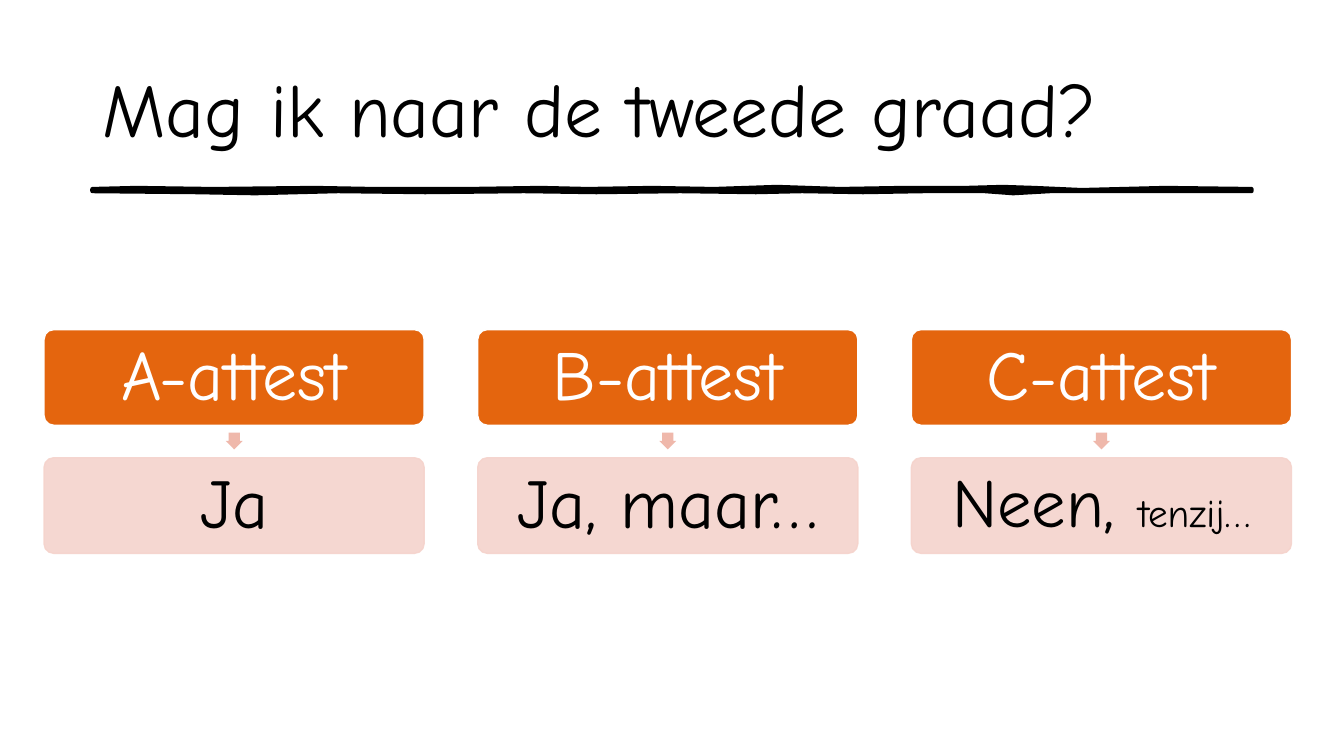
from dataclasses import dataclass

from lxml.etree import SubElement
from pptx import Presentation
from pptx.dml.color import RGBColor
from pptx.enum.shapes import MSO_SHAPE
from pptx.enum.text import MSO_ANCHOR, MSO_AUTO_SIZE, PP_ALIGN
from pptx.oxml.ns import qn
from pptx.shapes.autoshape import Shape
from pptx.slide import Slide
from pptx.text.text import TextFrame, _Paragraph
from pptx.util import Emu, Pt

PX = 9525
FONT = "Comic Neue"
BLACK = RGBColor(0x00, 0x00, 0x00)
WHITE = RGBColor(0xFF, 0xFF, 0xFF)
ORANGE = RGBColor(0xE4, 0x65, 0x0E)
PINK = RGBColor(0xF5, 0xD3, 0xCC)
ROSE = RGBColor(0xEF, 0xB8, 0xAB)

CARD_LEFT, CARD_STEP = 42, 413
CARD_WIDTH, CARD_HEIGHT = 362, 91
ATTEST_TOP, ARROW_TOP, ANSWER_TOP = 314, 412, 436
ARROW_SIZE = 16
CARD_INSET = 10

UNDERLINE_UPPER = [
    (88, 180), (130, 179), (203, 180), (300, 179), (356, 180), (446, 180),
    (515, 179), (560, 180), (621, 179), (680, 180), (740, 178), (800, 180),
    (860, 179), (920, 179), (955, 178), (985, 179), (1030, 181), (1110, 179),
    (1192, 180),
]
UNDERLINE_LOWER = [
    (1192, 182), (1145, 182), (1060, 182), (1000, 182), (965, 184), (938, 182),
    (880, 182), (822, 183), (764, 182), (720, 183), (648, 182), (568, 183),
    (499, 182), (405, 183), (322, 182), (243, 184), (187, 183), (88, 182),
]


@dataclass(frozen=True)
class Words:
    text: str
    size: int


@dataclass(frozen=True)
class Outcome:
    attest: Words
    answer: tuple[Words, ...]


OUTCOMES = [
    Outcome(Words("A-attest", 50), (Words("Ja", 50),)),
    Outcome(Words("B-attest", 50), (Words("Ja, maar…", 50),)),
    Outcome(Words("C-attest", 50), (Words("Neen, ", 49), Words("tenzij…", 28))),
]


def px(length: int) -> Emu:
    return Emu(length * PX)


def add_words(paragraph: _Paragraph, words: Words, color: RGBColor) -> None:
    run = paragraph.add_run()
    run.text = words.text
    run.font.name = FONT
    run.font.size = Pt(words.size)
    run.font.color.rgb = color


def prepare_frame(frame: TextFrame) -> None:
    frame.word_wrap = True
    frame.auto_size = MSO_AUTO_SIZE.NONE
    frame.vertical_anchor = MSO_ANCHOR.MIDDLE


def set_opacity(shape: Shape, percent: int) -> None:
    for color in shape._element.spPr.iter(qn("a:srgbClr")):
        SubElement(color, qn("a:alpha")).set("val", str(percent * 1000))


def add_title(slide: Slide) -> None:
    title = slide.shapes.title
    title.left, title.top, title.width, title.height = map(px, (88, 38, 1104, 139))
    prepare_frame(title.text_frame)
    paragraph = title.text_frame.paragraphs[0]
    paragraph.alignment = PP_ALIGN.LEFT
    paragraph.line_spacing = 0.9
    add_words(paragraph, Words("Mag ik naar de tweede graad?", 54), BLACK)


def add_underline(slide: Slide) -> None:
    start, *rest = UNDERLINE_UPPER + UNDERLINE_LOWER
    builder = slide.shapes.build_freeform(*start, scale=PX)
    builder.add_line_segments(rest, close=True)
    underline = builder.convert_to_shape()
    underline.shadow.inherit = False
    underline.fill.solid()
    underline.fill.fore_color.rgb = BLACK
    underline.line.color.rgb = BLACK
    underline.line.width = Pt(3)
    SubElement(underline.line._get_or_add_ln(), qn("a:round"))


def add_card(slide: Slide, left: int, top: int, fill: RGBColor, border: RGBColor,
             color: RGBColor, texts: tuple[Words, ...]) -> Shape:
    card = slide.shapes.add_shape(
        MSO_SHAPE.ROUNDED_RECTANGLE, px(left), px(top), px(CARD_WIDTH), px(CARD_HEIGHT))
    card.adjustments[0] = 0.1
    card.shadow.inherit = False
    card.fill.solid()
    card.fill.fore_color.rgb = fill
    card.line.color.rgb = border
    card.line.width = Pt(1)
    frame = card.text_frame
    prepare_frame(frame)
    frame.margin_left = frame.margin_right = px(CARD_INSET)
    frame.margin_top = frame.margin_bottom = px(CARD_INSET)
    paragraph = frame.paragraphs[0]
    paragraph.alignment = PP_ALIGN.CENTER
    paragraph.line_spacing = 0.9
    for words in texts:
        add_words(paragraph, words, color)
    return card


def add_arrow(slide: Slide, left: int) -> None:
    arrow = slide.shapes.add_shape(
        MSO_SHAPE.DOWN_ARROW, px(left), px(ARROW_TOP), px(ARROW_SIZE), px(ARROW_SIZE))
    arrow.adjustments[0] = 0.67
    arrow.adjustments[1] = 0.5
    arrow.shadow.inherit = False
    arrow.fill.solid()
    arrow.fill.fore_color.rgb = ROSE
    arrow.line.fill.background()


def add_outcome(slide: Slide, left: int, outcome: Outcome) -> None:
    add_card(slide, left, ATTEST_TOP, ORANGE, WHITE, WHITE, (outcome.attest,))
    add_arrow(slide, left + (CARD_WIDTH - ARROW_SIZE) // 2)
    answer = add_card(slide, left, ANSWER_TOP, PINK, PINK, BLACK, outcome.answer)
    set_opacity(answer, 90)


def main() -> None:
    presentation = Presentation()
    presentation.slide_width = px(1280)
    presentation.slide_height = px(720)
    slide = presentation.slides.add_slide(presentation.slide_layouts[5])
    add_underline(slide)
    add_title(slide)
    for column, outcome in enumerate(OUTCOMES):
        add_outcome(slide, CARD_LEFT + column * CARD_STEP, outcome)
    presentation.save("out.pptx")


if __name__ == "__main__":
    main()
